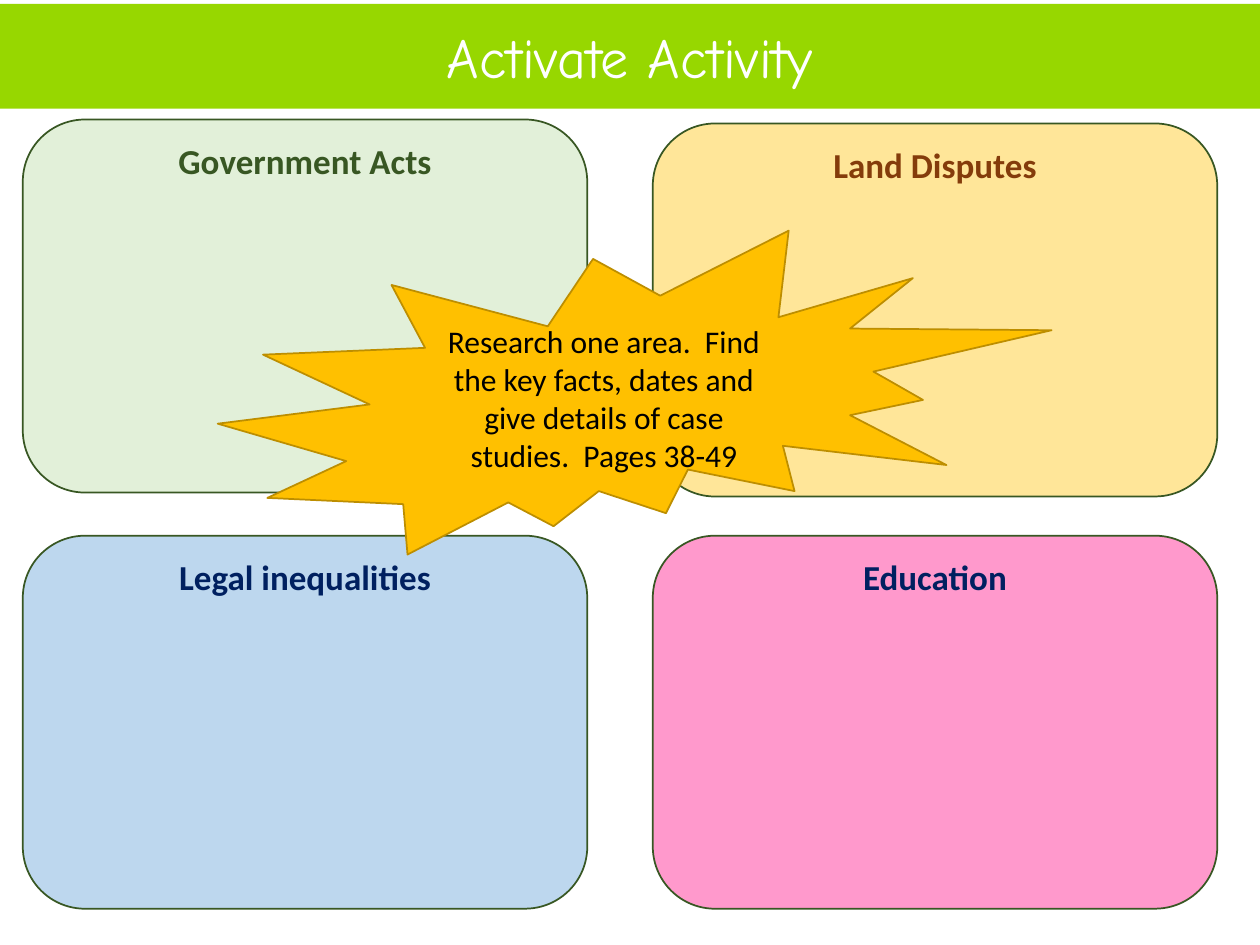
from dataclasses import dataclass
from typing import Optional

from pptx import Presentation
from pptx.dml.color import RGBColor
from pptx.enum.shapes import MSO_SHAPE as Preset
from pptx.enum.text import MSO_ANCHOR as Anchor, PP_ALIGN as Align
from pptx.util import Cm, Pt

HEADING = {"name": "Calibri", "size": Pt(20), "bold": True}
BODY = {"name": "Calibri", "size": Pt(18)}
TITLE = {"name": "Comic Neue", "size": Pt(32)}

PANEL_WIDTH, PANEL_HEIGHT = 11.38, 7.52
LEFT_COLUMN, RIGHT_COLUMN = 0.46, 13.16
LOWER_ROW = 10.8


@dataclass
class Block:
    """A filled shape with centred text; lengths in centimetres."""
    text: str
    left: float
    top: float
    width: float
    height: float
    fill: str
    ink: str
    font: dict
    preset: Preset = Preset.RECTANGLE
    outline: Optional[str] = None
    anchor: Anchor = Anchor.MIDDLE
    margin_top: float = 0.13


def paint(color_format, hex_color: str) -> None:
    color_format.rgb = RGBColor.from_string(hex_color)


def draw_block(slide, block: Block) -> None:
    bounds = (block.left, block.top, block.width, block.height)
    shape = slide.shapes.add_shape(block.preset, *map(Cm, bounds))
    shape.shadow.inherit = False
    shape.fill.solid()
    paint(shape.fill.fore_color, block.fill)
    if block.outline:
        paint(shape.line.color, block.outline)
        shape.line.width = Pt(1)
    else:
        shape.line.fill.background()

    frame = shape.text_frame
    frame_format = {"word_wrap": True, "vertical_anchor": block.anchor,
                    "margin_top": Cm(block.margin_top)}
    for attribute, value in frame_format.items():
        setattr(frame, attribute, value)
    paragraph = frame.paragraphs[0]
    paragraph.alignment = Align.CENTER
    run = paragraph.add_run()
    run.text = block.text
    for attribute, value in block.font.items():
        setattr(run.font, attribute, value)
    paint(run.font.color, block.ink)


def topic_panel(topic: str, left: float, top: float, fill: str, ink: str) -> Block:
    return Block(topic, left, top, PANEL_WIDTH, PANEL_HEIGHT, fill, ink, HEADING,
                 Preset.ROUNDED_RECTANGLE, "385723", Anchor.TOP, 0.04)


def main() -> None:
    deck = Presentation()
    deck.slide_width, deck.slide_height = Cm(25.4), Cm(19.05)
    slide = deck.slides.add_slide(deck.slide_layouts[6])

    # Title band
    title = Block("Activate Activity", 0, 0.08, 25.4, 2.11, "97D700", "FFFFFF", TITLE)

    # One panel for each research area
    topics = [
        topic_panel("Government Acts", LEFT_COLUMN, 2.41, "E2F0D9", "385723"),
        topic_panel("Education", RIGHT_COLUMN, LOWER_ROW, "FF99CC", "002060"),
        topic_panel("Land Disputes", RIGHT_COLUMN, 2.49, "FFE699", "843C0B"),
        topic_panel("Legal inequalities", LEFT_COLUMN, LOWER_ROW, "BDD7EE", "002060"),
    ]

    # Task burst on top of the panels
    task = Block("Research one area.  Find the key facts, dates and give details "
                 "of case studies.  Pages 38-49",
                 4.39, 4.65, 16.81, 6.53, "FFC000", "000000", BODY,
                 Preset.EXPLOSION2, "BD8E00")

    for block in [title, *topics, task]:
        draw_block(slide, block)
    deck.save("out.pptx")


if __name__ == "__main__":
    main()
